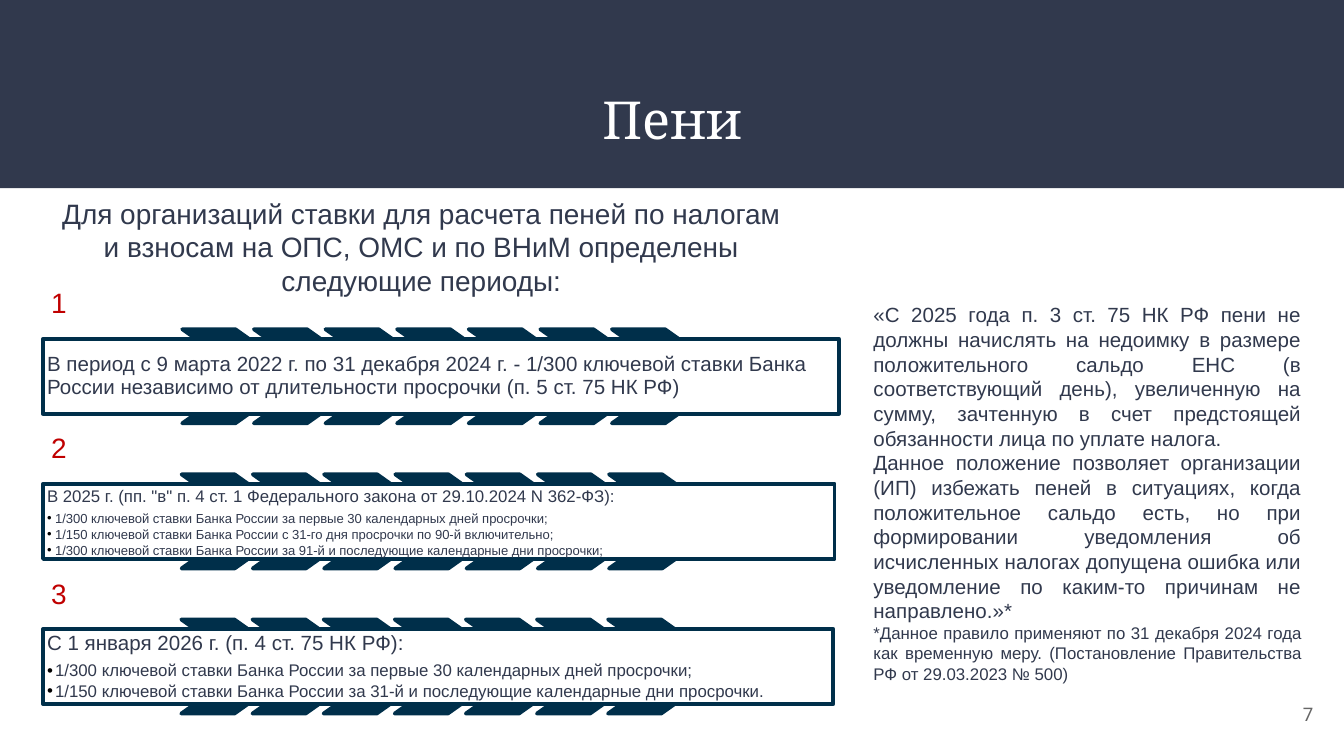
import lxml.etree
import pptx
import pptx.dml.color
import pptx.enum.shapes
import pptx.enum.text
import pptx.oxml.ns
import pptx.util

Inches = pptx.util.Inches
Pt = pptx.util.Pt
SHAPE = pptx.enum.shapes.MSO_SHAPE
ALIGN = pptx.enum.text.PP_ALIGN
ANCHOR = pptx.enum.text.MSO_ANCHOR
qn = pptx.oxml.ns.qn

COLORS = {
    "band": "31394D",
    "text": "31394D",
    "white": "FFFFFF",
    "accent": "002F4A",
    "number": "C00000",
    "page": "666666",
    "bullet": "000000",
}

PERIODS = [
    (["В период с 9 марта 2022 г. по 31 декабря 2024 г. - 1/300 ключевой ставки Банка "
      "России независимо от длительности просрочки (п. 5 ст. 75 НК РФ)"],
     11, 9, 5.92),
    (['В 2025 г. (пп. "в" п. 4 ст. 1 Федерального закона от 29.10.2024 N 362-ФЗ):',
      "1/300 ключевой ставки Банка России за первые 30 календарных дней просрочки;",
      "1/150 ключевой ставки Банка России с 31-го дня просрочки по 90-й включительно;",
      "1/300 ключевой ставки Банка России за 91-й и последующие календарные дни просрочки;"],
     9, 7, 5.89),
    (["С 1 января 2026 г. (п. 4 ст. 75 НК РФ):",
      "1/300 ключевой ставки Банка России за первые 30 календарных дней просрочки;",
      "1/150 ключевой ставки Банка России за 31-й и последующие календарные дни просрочки."],
     11, 9, 5.88),
]

NOTES = [
    ("«С 2025 года п. 3 ст. 75 НК РФ пени не должны начислять на недоимку в размере "
     "положительного сальдо ЕНС (в соответствующий день), увеличенную на сумму, "
     "зачтенную в счет предстоящей обязанности лица по уплате налога.", 11),
    ("Данное положение позволяет организации (ИП) избежать пеней в ситуациях, когда "
     "положительное сальдо есть, но при формировании уведомления об исчисленных налогах "
     "допущена ошибка или уведомление по каким-то причинам не направлено.»*", 11),
    ("*Данное правило применяют по 31 декабря 2024 года как временную меру. "
     "(Постановление Правительства РФ от 29.03.2023 № 500)", 9),
]


def rgb(name):
    """Return the named colour."""
    return pptx.dml.color.RGBColor.from_string(COLORS[name])


def setup_frame(tf, inset=0.1, anchor=ANCHOR.TOP):
    """Set wrapping, insets and anchor of a text frame."""
    tf.word_wrap = True
    tf.auto_size = pptx.enum.text.MSO_AUTO_SIZE.NONE
    tf.vertical_anchor = anchor
    tf.margin_left = tf.margin_right = Inches(inset)
    tf.margin_top = tf.margin_bottom = Inches(inset)


def fill_text(tf, items, color="text", font="Arial", align=ALIGN.LEFT, spacing=1.0):
    """Write (text, size) items as paragraphs and return the paragraphs."""
    tf.text = "\n".join(text for text, size in items)
    for p, (text, size) in zip(tf.paragraphs, items):
        p.alignment = align
        p.line_spacing = spacing
        for r in p.runs:
            r.font.size = Pt(size)
            r.font.name = font
            r.font.color.rgb = rgb(color)
    return tf.paragraphs


def add_text(slide, box, items, inset=0.1, anchor=ANCHOR.TOP, **style):
    """Add a text box in the given box."""
    tf = slide.shapes.add_textbox(*map(Inches, box)).text_frame
    setup_frame(tf, inset, anchor)
    fill_text(tf, items, **style)


def add_block(slide, kind, box, fill, line=None):
    """Add a flat filled shape with an optional 2 pt outline."""
    sp = slide.shapes.add_shape(kind, *map(Inches, box))
    sp.shadow.inherit = False
    sp.fill.solid()
    sp.fill.fore_color.rgb = rgb(fill)
    if line:
        sp.line.color.rgb = rgb(line)
        sp.line.width = Pt(2)
    else:
        sp.line.fill.background()
    return sp


def add_bullet(p, indent=0.06):
    """Give a paragraph a hanging bullet."""
    pPr = p._p.get_or_add_pPr()
    pPr.set("marL", str(Inches(indent)))
    pPr.set("indent", str(-Inches(indent)))
    clr = lxml.etree.SubElement(pPr, qn("a:buClr"))
    lxml.etree.SubElement(clr, qn("a:srgbClr"), val=COLORS["bullet"])
    lxml.etree.SubElement(pPr, qn("a:buFont"), typeface="Arial")
    lxml.etree.SubElement(pPr, qn("a:buChar"), char="•")


def build_header(slide, left, top, width, height):
    """Place the dark band and the title on it."""
    band = add_block(slide, SHAPE.RECTANGLE, (left, top, width, height), "band")
    title = slide.shapes.title
    title._element.addprevious(band._element)
    title.left, title.top = Inches(left + 0.34), Inches(top + 0.55)
    title.width, title.height = Inches(width - 0.68), Inches(0.68)
    setup_frame(title.text_frame)
    fill_text(title.text_frame, [("Пени", 28)], "white", "Cambria", ALIGN.CENTER)


def build_period(slide, left, top, width, number, lines, head_size, item_size):
    """Place a numbered period: label, chevron row and framed text."""
    add_text(slide, (left, top, 3.79, 0.34), [(str(number), 15)], inset=0.06,
             anchor=ANCHOR.BOTTOM, color="number", spacing=0.9)
    for i in range(7):
        x = left + width * (0.175 + 0.09 * i)
        chevron = add_block(slide, SHAPE.CHEVRON, (x, top + 0.35, 0.89, 0.7),
                            "accent", "accent")
        chevron.adjustments[0] = 0.706
    frame = add_block(slide, SHAPE.RECTANGLE, (left, top + 0.42, width, 0.56),
                      "white", "accent")
    tf = frame.text_frame
    setup_frame(tf, 0.03, ANCHOR.TOP if len(lines) > 1 else ANCHOR.MIDDLE)
    items = [(lines[0], head_size)] + [(line, item_size) for line in lines[1:]]
    head, *bullets = fill_text(tf, items, spacing=0.9)
    head.space_after = Pt(round(head_size * 0.35, 1))
    for p in bullets:
        p.space_after = Pt(round(item_size * 0.15, 1))
        add_bullet(p)


def build_periods(slide, left, top):
    """Stack the numbered periods at an equal pitch."""
    for i, (lines, head_size, item_size, width) in enumerate(PERIODS):
        build_period(slide, left, top + 1.08 * i, width, i + 1, lines, head_size, item_size)


def main():
    """Build and save the slide."""
    prs = pptx.Presentation()
    prs.slide_width = Inches(10)
    prs.slide_height = prs.slide_width * 9 // 16
    slide = prs.slides.add_slide(prs.slide_layouts[5])
    build_header(slide, 0, 0, 10, 1.4)
    intro = ("Для организаций ставки для расчета пеней по налогам и взносам на ОПС, ОМС "
             "и по ВНиМ определены следующие периоды:")
    add_text(slide, (0.34, 1.36, 5.59, 0.96), [(intro, 15)], align=ALIGN.CENTER)
    build_periods(slide, 0.32, 2.1)
    add_text(slide, (6.4, 2.15, 3.38, 3.16), NOTES, align=ALIGN.JUSTIFY)
    add_text(slide, (9.27, 5.1, 0.6, 0.43), [("7", 10)], anchor=ANCHOR.MIDDLE,
             color="page", font="Roboto", align=ALIGN.RIGHT)
    prs.save("out.pptx")


if __name__ == "__main__":
    main()
